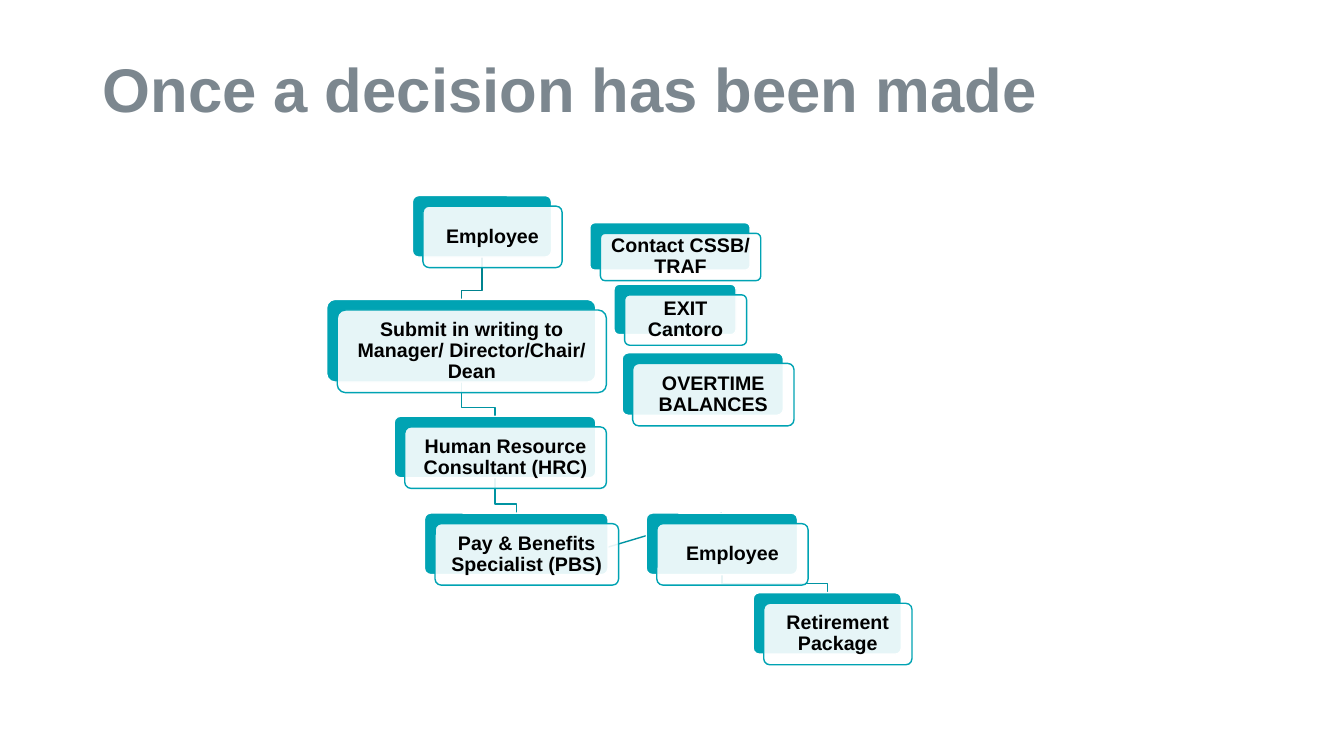
from lxml import etree
from pptx import Presentation
from pptx.dml.color import RGBColor as RGB
from pptx.enum.shapes import MSO_CONNECTOR as CONN, MSO_SHAPE as SHAPE
from pptx.enum.text import MSO_ANCHOR as ANCHOR, PP_ALIGN as ALIGN
from pptx.oxml.ns import qn
from pptx.util import Inches, Pt

TITLE = "Once a decision has been made"
CARDS = {
    "contact": ("Contact CSSB/ TRAF", 5.85, 2.21, 1.59, 0.47),
    "employee": ("Employee", 4.09, 1.94, 1.38, 0.61),
    "submit": ("Submit in writing to Manager/ Director/Chair/ Dean", 3.24, 2.97, 2.67, 0.82),
    "hrc": ("Human Resource Consultant (HRC)", 3.91, 4.13, 2.0, 0.61),
    "pbs": ("Pay & Benefits Specialist (PBS)", 4.21, 5.09, 1.82, 0.61),
    "retiree": ("Employee", 6.41, 5.09, 1.5, 0.61),
    "package": ("Retirement Package", 7.47, 5.88, 1.47, 0.61),
    "exit": ("EXIT Cantoro", 6.09, 2.82, 1.21, 0.5),
    "overtime": ("OVERTIME BALANCES", 6.17, 3.5, 1.6, 0.62),
}
ELBOWS = [
    ("retiree", "package", "link"),
    ("pbs", "retiree", None),
    ("hrc", "pbs", "link"),
    ("submit", "hrc", "link"),
    ("employee", "submit", "first_link"),
]
STRAIGHT = ("pbs", "retiree")
THEME = {
    "font": "Arial", "title_size": 44, "card_size": 14,
    "title": "7C878F", "text": "000000", "teal": "00A3B3",
    "white": "FFFFFF", "link": "0094A2", "first_link": "00838F",
}
OFFSET = 0.105
BEND = 0.09
PADDING = 0.06


def color(name):
    return RGB.from_string(THEME[name])


def style_line(sp, name):
    sp.line.color.rgb = color(name)
    sp.line.width = Pt(1)


def write(sp, text, size, name, align):
    tf = sp.text_frame
    tf.word_wrap = True
    tf.vertical_anchor = ANCHOR.MIDDLE
    tf.text = text
    p = tf.paragraphs[0]
    p.alignment = align
    p.line_spacing = 0.9
    font = p.runs[0].font
    font.name, font.size, font.bold = THEME["font"], Pt(THEME[size]), True
    font.color.rgb = color(name)
    return tf


def add_elbow(shapes, parent, child, name):
    _, px, py, pw, ph = CARDS[parent]
    _, cx, cy, cw, _ = CARDS[child]
    x1, y1, x2 = px + pw / 2, py + ph, cx + cw / 2
    points = [(x1, y1), (x1, cy - BEND), (x2, cy - BEND), (x2, cy)]
    start, *rest = [(Inches(x), Inches(y)) for x, y in points]
    builder = shapes.build_freeform(*start)
    builder.add_line_segments(rest, close=False)
    sp = builder.convert_to_shape()
    sp.shadow.inherit = False
    sp.fill.background()
    style_line(sp, name)


def add_straight(shapes):
    sp = shapes.add_connector(CONN.STRAIGHT, 0, 0, 0, 0)
    style_line(sp, "link")
    etree.SubElement(sp._element.spPr, qn("a:effectLst"))
    return sp


def add_panel(shapes, x, y, w, h, fill, line):
    sp = shapes.add_shape(SHAPE.ROUNDED_RECTANGLE, Inches(x), Inches(y), Inches(w), Inches(h))
    sp.adjustments[0] = 0.1
    sp.shadow.inherit = False
    sp.fill.solid()
    sp.fill.fore_color.rgb = color(fill)
    style_line(sp, line)
    return sp


def add_card(shapes, text, x, y, w, h):
    back = add_panel(shapes, x, y, w, h, "teal", "white")
    front = add_panel(shapes, x + OFFSET, y + OFFSET, w, h, "white", "teal")
    rgb = front._element.spPr.find(qn("a:solidFill")).find(qn("a:srgbClr"))
    etree.SubElement(rgb, qn("a:alpha"), val="90000")
    tf = write(front, text, "card_size", "text", ALIGN.CENTER)
    tf.margin_left = tf.margin_right = tf.margin_top = tf.margin_bottom = Inches(PADDING)
    return back


def main():
    prs = Presentation()
    prs.slide_width, prs.slide_height = Inches(13.33), Inches(7.5)
    s = prs.slides.add_slide(prs.slide_layouts[6])
    title = s.shapes.add_textbox(Inches(0.92), Inches(0.4), Inches(11.5), Inches(1.04))
    write(title, TITLE, "title_size", "title", ALIGN.LEFT)

    for parent, child, name in ELBOWS:
        if name:
            add_elbow(s.shapes, parent, child, name)
    straight = add_straight(s.shapes)
    backs = {key: add_card(s.shapes, *card) for key, card in CARDS.items()}
    parent, child = STRAIGHT
    straight.begin_connect(backs[parent], 2)
    straight.end_connect(backs[child], 0)
    prs.save("out.pptx")


if __name__ == "__main__":
    main()
